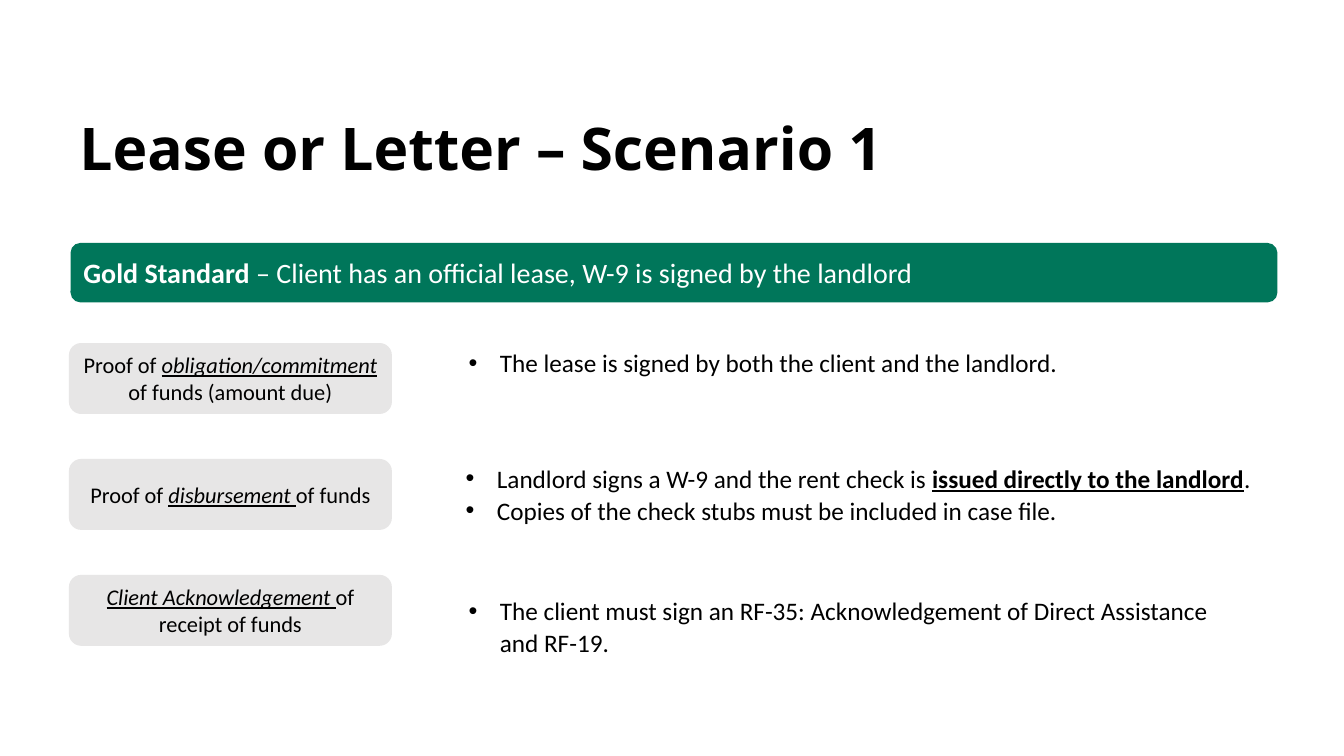
from pptx import Presentation
from pptx.dml.color import RGBColor as RGB
from pptx.enum.shapes import MSO_SHAPE as Shape
from pptx.enum.text import MSO_ANCHOR as Anchor, MSO_AUTO_SIZE as Fit, PP_ALIGN as Align
from pptx.oxml.xmlchemy import OxmlElement as Element
from pptx.util import Inches, Pt

COLORS = {"text": "000000", "white": "FFFFFF", "green": "00765A", "gray": "E7E6E6"}
BODY, HEAD = "Calibri", "Open Sans"

# Each row: label runs, note box (offset from the label, size), line spacing, notes.
# A run is (text, style), with b, i, u for bold, italic, underline.
ROWS = [
    ([("Proof of ", ""), ("obligation/commitment ", "iu"), ("of funds (amount due)", "")],
     (2.86, -0.01, 9.44, 0.4), 1.0,
     [[("The lease is signed by both the client and the landlord.", "")]]),
    ([("Proof of ", ""), ("disbursement", "iu"), (" ", "u"), ("of funds", "")],
     (2.83, -0.03, 9.12, 0.72), 1.05,
     [[("Landlord signs a W-9 and the rent check is ", ""),
       ("issued directly to the landlord", "bu"), (".", "")],
      [("Copies of the check stubs must be included in case file.", "")]]),
    ([("Client Acknowledgement ", "iu"), ("of receipt of funds", "")],
     (2.86, 0.13, 8.83, 0.72), 1.05,
     [[("The client must sign an RF-35: Acknowledgement of Direct Assistance and RF-19.", "")]]),
]


def write(para, runs, size, color="text", face=BODY):
    for text, style in runs:
        run = para.add_run()
        run.text = text
        font = run.font
        font.name, font.size = face, Pt(size)
        font.color.rgb = RGB.from_string(COLORS[color])
        font.bold, font.italic, font.underline = (key in style for key in "biu")


def add_text(slide, box):
    frame = slide.shapes.add_textbox(*map(Inches, box)).text_frame
    frame.word_wrap = True
    frame.auto_size = Fit.SHAPE_TO_FIT_TEXT
    return frame


def add_panel(slide, box, color, runs, size, ink, align, border=False):
    panel = slide.shapes.add_shape(Shape.ROUNDED_RECTANGLE, *map(Inches, box))
    panel.shadow.inherit = False
    panel.fill.solid()
    panel.fill.fore_color.rgb = RGB.from_string(COLORS[color])
    if border:
        panel.line.color.rgb = RGB.from_string(COLORS[color])
        panel.line.width = Pt(1)
    else:
        panel.line.fill.background()
    frame = panel.text_frame
    frame.word_wrap = True
    frame.vertical_anchor = Anchor.MIDDLE
    para = frame.paragraphs[0]
    para.alignment = align
    write(para, runs, size, ink)


def add_bullet(para):
    para.level = 2
    props = para._p.get_or_add_pPr()
    props.set("marL", str(Inches(1.31)))
    props.set("indent", str(Inches(-0.31)))
    font = Element("a:buFont")
    font.set("typeface", "Arial")
    mark = Element("a:buChar")
    mark.set("char", "•")
    props.extend([font, mark])


def add_title(slide, box):
    frame = add_text(slide, box)
    write(frame.paragraphs[0], [("Lease or Letter – Scenario 1", "b")], 42, face=HEAD)


def add_banner(slide, box):
    runs = [("Gold Standard ", "b"),
            ("– Client has an official lease, W-9 is signed by the landlord", "")]
    add_panel(slide, box, "green", runs, 20, "white", Align.LEFT)


def add_row(slide, box, label, place, space, notes):
    left, top = box[:2]
    add_panel(slide, box, "gray", label, 16, "text", Align.CENTER, border=True)
    dx, dy, width, height = place
    frame = add_text(slide, (left + dx, top + dy, width, height))
    for index, runs in enumerate(notes):
        para = frame.add_paragraph() if index else frame.paragraphs[0]
        para.line_spacing = space
        add_bullet(para)
        write(para, runs, 18)


def main():
    deck = Presentation()
    deck.slide_width, deck.slide_height = Inches(13.33), Inches(7.5)
    slide = deck.slides.add_slide(deck.slide_layouts[6])

    # Heading and banner
    add_title(slide, (0.69, 1.06, 12.64, 0.81))
    add_banner(slide, (0.7, 2.41, 11.97, 0.59))

    # Proof rows at an even pitch
    for index, row in enumerate(ROWS):
        add_row(slide, (0.69, 3.41 + 1.15 * index, 3.19, 0.69), *row)

    deck.save("out.pptx")


if __name__ == "__main__":
    main()
